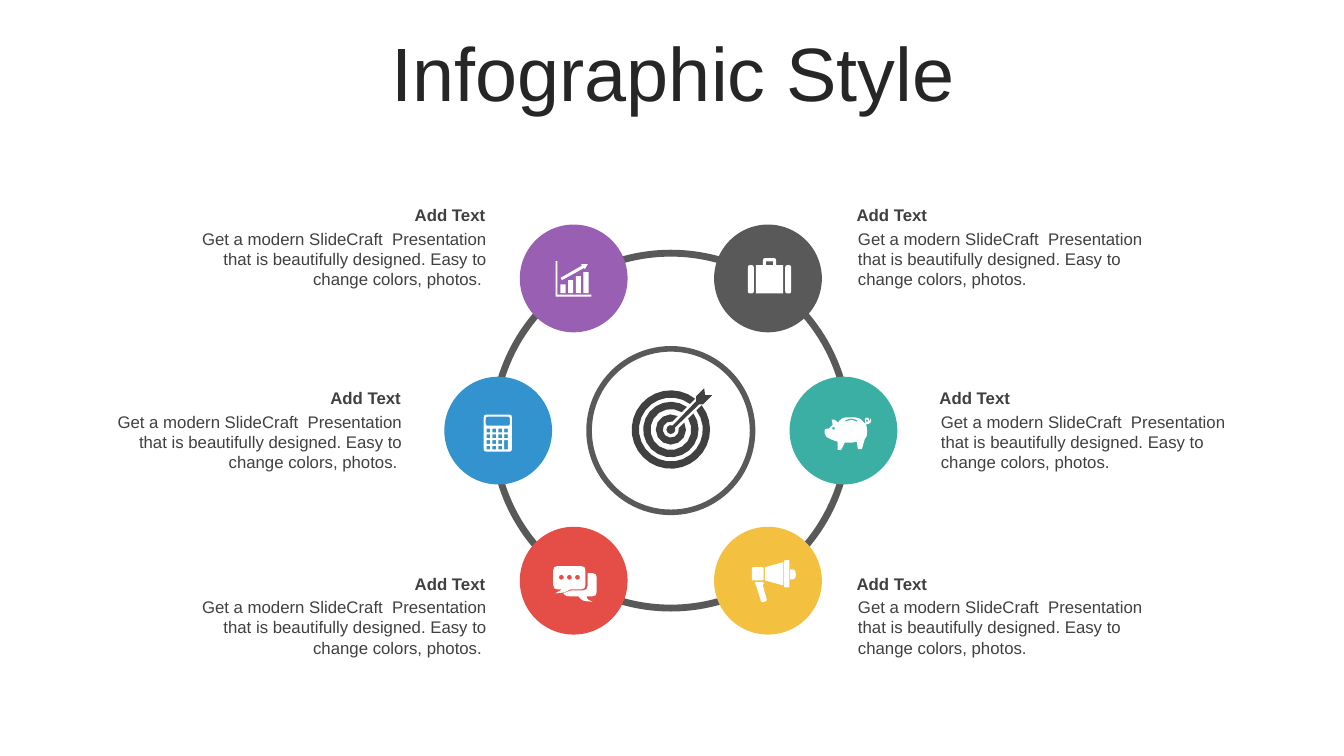
from dataclasses import dataclass
from math import asin, cos, degrees, dist, radians, sin

from pptx import Presentation
from pptx.dml.color import RGBColor
from pptx.enum.shapes import MSO_SHAPE
from pptx.enum.text import MSO_ANCHOR, MSO_AUTO_SIZE, PP_ALIGN
from pptx.util import Pt

LEFT, CENTER, RIGHT = PP_ALIGN.LEFT, PP_ALIGN.CENTER, PP_ALIGN.RIGHT
OVAL, DONUT = MSO_SHAPE.OVAL, MSO_SHAPE.DONUT
MIDDLE = MSO_ANCHOR.MIDDLE
NO_FIT, GROW = MSO_AUTO_SIZE.NONE, MSO_AUTO_SIZE.SHAPE_TO_FIT_TEXT


@dataclass(frozen=True)
class Theme:
    font: str = "Arial"
    title_size: int = 54
    text_size: int = 12
    title: str = "262626"
    text: str = "404040"
    ring: str = "595959"
    white: str = "FFFFFF"
    purple: str = "995FB2"
    blue: str = "3293CF"
    teal: str = "3CAFA4"
    yellow: str = "F3C040"
    red: str = "E54E46"


THEME = Theme()
HUB_X, HUB_Y = 479.2, 307.6
TEXT_WIDTH = 230
HEADING = "Add Text"
BODY = ("Get a modern SlideCraft  Presentation that is beautifully designed. "
        "Easy to change colors, photos.")


def apply(target, values):
    for name, value in values.items():
        setattr(target, name, value)


def write(box, text, align, size, colour, bold=False):
    para = box.text_frame.paragraphs[0]
    para.alignment = align
    span = para.add_run()
    span.text = text
    apply(span.font, {"name": THEME.font, "size": Pt(size), "bold": bold})
    span.font.color.rgb = RGBColor.from_string(colour)
    return para


def add_title(page, text):
    box = page.shapes.title
    apply(box, {"left": Pt(25.2), "top": Pt(26.6), "width": Pt(911.5), "height": Pt(56.9)})
    apply(box.text_frame, {"vertical_anchor": MIDDLE, "auto_size": NO_FIT, "word_wrap": True})
    para = write(box, text, CENTER, THEME.title_size, THEME.title)
    apply(para, {"line_spacing": 0.9, "space_before": Pt(10)})


def add_text(page, left, top, height, text, align, bold=False):
    box = page.shapes.add_textbox(Pt(left), Pt(top), Pt(TEXT_WIDTH), Pt(height))
    apply(box.text_frame, {"word_wrap": True, "auto_size": GROW})
    write(box, text, align, THEME.text_size, THEME.text, bold)


def add_label(page, left, top, align):
    add_text(page, left, top, 21.6, HEADING, align, bold=True)
    # A closing space sets the last right-aligned line slightly inward.
    body = BODY + " " if align == RIGHT else BODY
    add_text(page, left + 1, top + 16.9, 51.1, body, align)


def paint(shape, fill):
    shape.shadow.inherit = False
    shape.fill.solid()
    shape.fill.fore_color.rgb = RGBColor.from_string(fill)
    shape.line.fill.background()


def add_round(page, kind, x, y, diameter, fill):
    """Add a round shape centred on x, y."""
    shape = page.shapes.add_shape(kind, Pt(x - diameter / 2), Pt(y - diameter / 2),
                                  Pt(diameter), Pt(diameter))
    paint(shape, fill)
    return shape


def add_icon(page, x, y, contours, fill):
    """Add one outline; contours lying inside others become holes."""
    placed = [[(100 * (x + px), 100 * (y + py)) for px, py in contour] for contour in contours]
    builder = page.shapes.build_freeform(*placed[0][0], scale=Pt(1) / 100)
    for index, contour in enumerate(placed):
        if index:
            builder.move_to(*contour[0])
        builder.add_line_segments(contour[1:], close=True)
    paint(builder.convert_to_shape(), fill)


def outline(*corners):
    """Return a polygon; a corner's third value is its rounding radius."""
    points = []
    for index, (x, y, *radius) in enumerate(corners):
        if not any(radius):
            points.append((x, y))
            continue
        ends = []
        for nx, ny, *_ in (corners[index - 1], corners[(index + 1) % len(corners)]):
            length = dist((x, y), (nx, ny))
            part = min(radius[0], length / 2) / length
            ends.append((x + part * (nx - x), y + part * (ny - y)))
        (ax, ay), (bx, by) = ends
        middle = (ax + 2 * x + bx) / 4, (ay + 2 * y + by) / 4
        points += [(ax, ay), middle, (bx, by)]
    return points


def block(x, y, width, height, radius=0):
    right, bottom = x + width, y + height
    return outline((x, y, radius), (right, y, radius), (right, bottom, radius), (x, bottom, radius))


def arc(radius, start=0, end=360, x=0, y=0):
    steps = max(8, round(radius))
    angles = [radians(start + (end - start) * i / steps) for i in range(steps + 1)]
    return [(x + radius * cos(a), y - radius * sin(a)) for a in angles]


def open_ring(outer, inner, gap=3.3):
    """Return a ring cut by a parallel slot towards the upper right."""
    wide, narrow = (degrees(asin(gap / radius)) for radius in (outer, inner))
    return arc(outer, 45 + wide, 405 - wide) + arc(inner, 405 - narrow, 45 + narrow)


def chart_icon():
    bars = [block(3.4 + 5.5 * i, 16.6 - 2.9 * i, 3.7, 6.4 + 2.9 * i) for i in range(4)]
    axes = outline((0, 0), (1.3, 0), (1.3, 24), (25.5, 24), (25.5, 25.4), (0, 25.4))
    arrow = outline((18.2, 2.2), (23, 2.2), (20.9, 5.8), (20.2, 5), (4.5, 13.7),
                    (3.6, 12), (18.9, 3.2))
    return bars + [axes, arrow]


def case_icon():
    sides = [block(0, 5, 4.3, 20.2, 1.5), block(26.7, 5, 4.3, 20.2, 1.5)]
    middle = outline((5.8, 5), (10.8, 5), (10.8, 0, 1.5), (20.2, 0, 1.5), (20.2, 5),
                     (25.2, 5), (25.2, 25.2), (5.8, 25.2))
    return sides + [middle, block(13, 2.4, 5, 2.6)]


def calculator_icon():
    keys = [block(2.1 + 4.2 * col, 10.1 + 4.1 * row, 2.6, 2.6)
            for row in range(4) for col in range(4) if col < 3 or row < 2]
    return [block(0, 0, 20.2, 26.6, 2), block(1.5, 1.5, 17.2, 6.5, 1.3),
            block(14.7, 18.3, 2.6, 6.7), *keys]


def pig_icon():
    body = outline((18.7, -0.2), (25, 0, 4), (28.1, 3.6), (29.5, 4.3), (28.7, 2.2, 1),
                   (29, 0, 2), (31.7, 0, 1.5), (31.7, 2.6), (33.1, 0.5), (33.3, 4, 2),
                   (29.5, 5), (30.2, 7.2), (30.5, 13, 4), (28.8, 15.1), (26.6, 22.6),
                   (23.8, 22.6), (23, 17.3), (19, 18), (14.4, 18), (11.8, 23), (9.4, 23),
                   (9.4, 17.3), (0, 14, 5), (0, 8.2, 1), (2.9, 7.9), (5.8, 5),
                   (5, 1.4), (7.5, 1.4, 1.5), (9.4, 3.6), (13, -0.2, 4))
    slot = outline((14.4, 2.2), (18.9, 0.2, 3), (23.8, 2.2), (23, 2.9), (18.9, 1.3, 3), (15.1, 2.9))
    return [body, slot, arc(1, x=6.4, y=7.7), arc(0.8, x=30.3, y=2.2)]


def chat_icon():
    front = outline((0, 0, 3), (23, 0, 3), (23, 16.6, 3), (12.2, 16.6), (8, 19, 3),
                    (1.4, 19.4), (6.5, 16.6), (0, 16.6, 3))
    back = outline((24.5, 5), (31, 5, 3), (31, 21.6, 3), (23.8, 21.6), (24.5, 24, 2),
                   (28.1, 25.4), (21, 25, 3), (18, 21.6), (9, 21.6, 3), (7.2, 19.4),
                   (13, 17.3), (24.5, 17.3, 3))
    return [front, back] + [arc(1.8, x=5.8 + 5.75 * i, y=8) for i in range(3)]


def megaphone_icon():
    handle = outline((7.9, 15.6), (8.6, 16.6), (7.9, 18), (11, 29, 1.5),
                     (6.9, 30.4, 1.5), (3.6, 19.4), (2.9, 18), (2.2, 15.6))
    ear = outline((27.4, 6.5), (31.5, 6.5, 3.6), (31.5, 13.7, 3.6), (27.4, 13.7))
    cone = outline((9.4, 5), (22.5, 1.4), (22.5, 18), (9.4, 14.4))
    return [handle, ear, cone, block(0, 5, 8.4, 9.4, 0.8), block(23.2, 0, 3.6, 19.4, 0.6)]


def target_icon():
    shaft = outline((18, -20.2), (18, -23.8), (23.8, -29.5), (24.5, -24.5),
                    (29.5, -24.5), (23, -18), (20.2, -18))
    return [open_ring(28, 22.8), open_ring(19.8, 14.6), open_ring(10.8, 5.8),
            arc(3.2, 65, 385) + shaft[::-1]]


# Node offset from the hub, colour, label place, and icon place.
NODES = [
    (-69.4, -108.7, THEME.purple, 123.8, 142.6, RIGHT, chart_icon, 396.9, 186.5),
    (69.4, -108.7, THEME.ring, 604.8, 142.6, LEFT, case_icon, 534.2, 184.4),
    (-123.3, 0, THEME.blue, 63.5, 273.6, RIGHT, calculator_icon, 345.5, 296.1),
    (123.3, 0, THEME.teal, 664, 273.6, LEFT, pig_icon, 589, 298.3),
    (-69.4, 107.2, THEME.red, 123.8, 406, RIGHT, chat_icon, 395.2, 404.4),
    (69.4, 107.2, THEME.yellow, 604.8, 406, LEFT, megaphone_icon, 537, 400.2),
]


def main():
    deck = Presentation()
    apply(deck, {"slide_width": Pt(960), "slide_height": Pt(540)})
    page = deck.slides.add_slide(deck.slide_layouts[5])
    add_title(page, "Infographic Style")

    hub = add_round(page, OVAL, HUB_X, HUB_Y, 116.8, THEME.white)
    hub.line.color.rgb = RGBColor.from_string(THEME.ring)
    hub.line.width = Pt(4)
    ring = add_round(page, DONUT, HUB_X, HUB_Y, 258.4, THEME.ring)
    ring.adjustments[0] = 0.019
    add_icon(page, HUB_X, HUB_Y - 0.8, target_icon(), THEME.text)

    for dx, dy, colour, left, top, align, icon, icon_x, icon_y in NODES:
        add_label(page, left, top, align)
        add_round(page, OVAL, HUB_X + dx, HUB_Y + dy, 77, colour)
        add_icon(page, icon_x, icon_y, icon(), THEME.white)
    deck.save("out.pptx")


if __name__ == "__main__":
    main()
